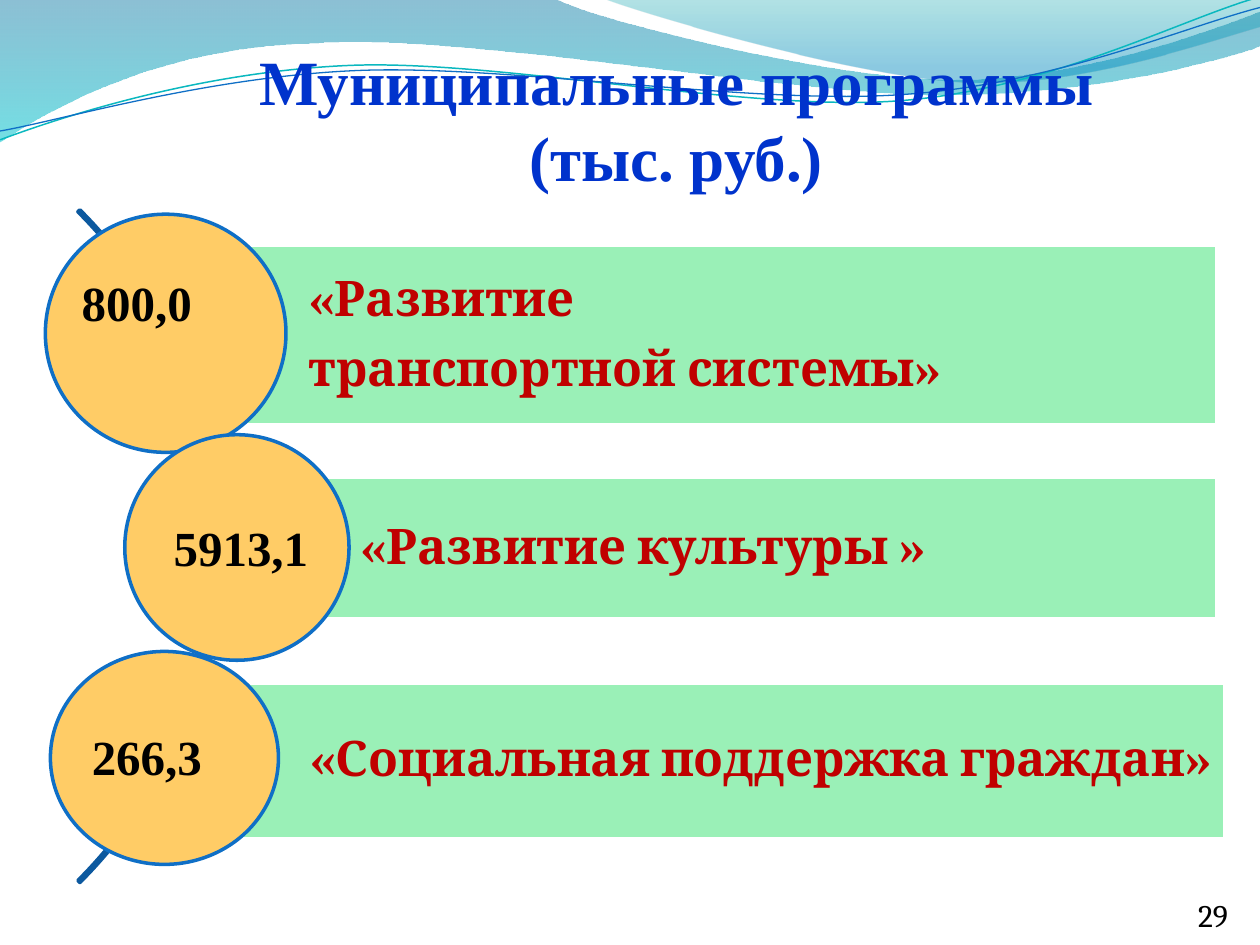
from math import cos, radians, sin

from pptx import Presentation
from pptx.dml.color import RGBColor
from pptx.enum.shapes import MSO_SHAPE
from pptx.enum.text import MSO_ANCHOR, MSO_AUTO_SIZE, PP_ALIGN
from pptx.oxml import parse_xml
from pptx.oxml.ns import nsdecls, qn
from pptx.util import Inches, Pt

RECTANGLE, ELLIPSE, BLOCK_ARC = MSO_SHAPE.RECTANGLE, MSO_SHAPE.OVAL, MSO_SHAPE.BLOCK_ARC
MIDDLE, TOP = MSO_ANCHOR.MIDDLE, MSO_ANCHOR.TOP
LEFT, CENTER = PP_ALIGN.LEFT, PP_ALIGN.CENTER
GROW, FIXED = MSO_AUTO_SIZE.SHAPE_TO_FIT_TEXT, MSO_AUTO_SIZE.NONE

COLORS = {
    "title": "0033CC", "program": "C00000", "value": "000000",
    "band": "9AF0B7", "band_line": "FFFFFF",
    "circle": "FFCC66", "circle_line": "0F6FC6", "arc": "0C599F",
}
SERIF, BODY = "Times New Roman", "Cambria"

TITLE = ["Муниципальные программы ", "(тыс. руб.) "]
PAGE_NUMBER = "29"

# Boxes are left, top, width, height in inches
PROGRAMS = [
    {"lines": ["«Развитие", "транспортной системы»"], "band": (1.56, 1.95, 8.1, 1.42),
     "circle": (0.36, 1.7, 1.91, 1.89), "value": "800,0", "value_box": (0.55, 2.11, 1.62, 0.57)},
    {"lines": ["«Развитие культуры »"], "band": (1.97, 3.79, 7.69, 1.12),
     "circle": (0.99, 3.45, 1.78, 1.79), "value": "5913,1", "value_box": (1.28, 4.06, 1.42, 0.57)},
    {"lines": ["«Социальная поддержка граждан»"], "band": (1.57, 5.42, 8.15, 1.24),
     "circle": (0.4, 5.17, 1.81, 1.69), "value": "266,3", "value_box": (0.63, 5.72, 1.42, 0.57)},
]

# Outlines: a start point, then steps of one point (line) or three points (Bezier curve).
# Gradient stops: position, colour, opacity in percent
WAVES = [
    {"start": (0, 0), "steps": [
        [(4.4, -0.01)], [(4.76, 0.17), (6.64, 0.63), (7.58, 0.63)],
        [(8.53, 0.63), (9.58, 0.26), (10, 0.09)], [(10.01, 0.36)],
        [(9.83, 0.44), (8.7, 0.76), (7.46, 0.75)], [(6.22, 0.75), (3.82, 0.28), (2.57, 0.34)],
        [(1.29, 0.36), (0.46, 0.83), (-0.01, 1.13)]],
     "stops": [(0, "0074A1", 45), (1, "00C6CF", 55)]},
    {"start": (4.79, -0.01), "steps": [
        [(5.09, 0.11), (6.82, 0.62), (7.69, 0.65)], [(8.56, 0.69), (9.61, 0.32), (10, 0.21)],
        [(10, 0)]],
     "stops": [(0, "00A1A9", 30), (0.8, "008BBF", 45)]},
    {"start": (0, 1.11), "steps": [
        [(0.48, 0.93), (1.58, 0.57), (2.77, 0.52)], [(3.95, 0.47), (5.93, 0.89), (7.13, 0.8)],
        [(8.33, 0.71), (9.38, 0.15), (9.98, -0.02)]],
     "line": ("0AB8BF", 0.85), "center": (4.99, 0.58)},
    {"start": (0, 1.04), "steps": [
        [(0.47, 0.96), (1.64, 0.61), (2.83, 0.56)], [(4.03, 0.51), (5.97, 0.84), (7.17, 0.75)],
        [(8.36, 0.67), (9.41, 0.21), (10, 0.06)]],
     "line": ("0F6FC6", 0.75), "center": (5, 0.59)},
]
LINE_TILT = 2.7  # degrees, counter-clockwise
UNITS = 1000  # outline units per inch


def rgb(color):
    return RGBColor.from_string(color)


def inches(box):
    return [Inches(length) for length in box]


def level(point, center):
    """Turn a point of a tilted line back, in outline units."""
    x, y = point
    if center:
        dx, dy = x - center[0], y - center[1]
        cosine, sine = cos(radians(LINE_TILT)), sin(radians(LINE_TILT))
        x, y = center[0] + dx * cosine - dy * sine, center[1] + dx * sine + dy * cosine
    return round(x * UNITS), round(y * UNITS)


def style(shape, fill, line, width=2):
    shape.shadow.inherit = False
    if fill:
        shape.fill.solid()
        shape.fill.fore_color.rgb = rgb(fill)
    else:
        shape.fill.background()
    shape.line.color.rgb = rgb(line)
    shape.line.width = Pt(width)


def add_outline(slide, wave):
    """Add a freeform through the end points, then bend its segments into curves."""
    center = wave.get("center")
    start = level(wave["start"], center)
    steps = [[level(point, center) for point in step] for step in wave["steps"]]
    ends = [step[-1] for step in steps]
    builder = slide.shapes.build_freeform(*start, scale=Inches(1) / UNITS)
    builder.add_line_segments(ends, close="stops" in wave)
    shape = builder.convert_to_shape()
    left, top = (min(values) for values in zip(start, *ends))
    segments = list(shape.element.spPr.iter(qn("a:lnTo")))
    for segment, step in zip(segments, steps):
        if len(step) == 3:
            points = "".join(f'<a:pt x="{x - left}" y="{y - top}"/>' for x, y in step)
            curve = parse_xml(f'<a:cubicBezTo {nsdecls("a")}>{points}</a:cubicBezTo>')
            segment.getparent().replace(segment, curve)
    return shape


def add_wave(slide, wave):
    shape = add_outline(slide, wave)
    if "line" in wave:
        style(shape, None, *wave["line"])
        shape.rotation = 360 - LINE_TILT
        return
    shape.shadow.inherit = False
    shape.line.fill.background()
    shape.fill.gradient()
    shape.fill.gradient_angle = 270
    for stop, (position, color, _) in zip(shape.fill.gradient_stops, wave["stops"]):
        stop.position = position
        stop.color.rgb = rgb(color)
    for element, (_, _, opacity) in zip(shape.element.spPr.iter(qn("a:srgbClr")), wave["stops"]):
        element.append(parse_xml(f'<a:alpha {nsdecls("a")} val="{opacity * 1000}"/>'))


def write(shape, lines, size, font, color, bold=True, align=LEFT, anchor=TOP,
          wrap=True, auto_size=GROW):
    frame = shape.text_frame
    frame.word_wrap = wrap
    frame.auto_size = auto_size
    frame.vertical_anchor = anchor
    for index, line in enumerate(lines):
        paragraph = frame.add_paragraph() if index else frame.paragraphs[0]
        paragraph.alignment = align
        run = paragraph.add_run()
        run.text = line
        run.font.size = Pt(size)
        run.font.name = font
        run.font.bold = bold
        run.font.color.rgb = rgb(color)
    return frame


def add_program(slide, program):
    band = slide.shapes.add_shape(RECTANGLE, *inches(program["band"]))
    style(band, COLORS["band"], COLORS["band_line"])
    frame = write(band, program["lines"], 28, BODY, COLORS["program"],
                  anchor=MIDDLE, auto_size=FIXED)
    frame.margin_left = Inches(0.89)
    frame.margin_top = frame.margin_right = frame.margin_bottom = Inches(0.08)
    for paragraph in frame.paragraphs:
        paragraph.line_spacing = 0.9
        paragraph.space_after = Pt(9.8)
    circle = slide.shapes.add_shape(ELLIPSE, *inches(program["circle"]))
    style(circle, COLORS["circle"], COLORS["circle_line"])


def main():
    presentation = Presentation()
    presentation.slide_width, presentation.slide_height = Inches(10), Inches(7.5)
    slide = presentation.slides.add_slide(presentation.slide_layouts[5])

    title = slide.shapes.title
    title.left, title.top, title.width, title.height = inches((1.92, 0.29, 7.02, 1.31))
    write(title, TITLE, 36, SERIF, COLORS["title"], align=CENTER, wrap=False)

    for wave in WAVES:
        add_wave(slide, wave)
    slide.shapes.element.append(title.element)  # title in front of the waves

    arc = slide.shapes.add_shape(BLOCK_ARC, *inches((-5.81, 0.56, 7.55, 7.55)))
    for index, value in enumerate((189, 27, 0.003)):
        arc.adjustments[index] = value
    style(arc, None, COLORS["arc"])

    for program in PROGRAMS:
        add_program(slide, program)
    for program in PROGRAMS:
        value_box = slide.shapes.add_textbox(*inches(program["value_box"]))
        write(value_box, [program["value"]], 28, SERIF, COLORS["value"])
    page_box = slide.shapes.add_textbox(*inches((9.41, 7.06, 0.51, 0.4)))
    write(page_box, [PAGE_NUMBER], 18, BODY, COLORS["value"], bold=False)

    presentation.save("out.pptx")


if __name__ == "__main__":
    main()
